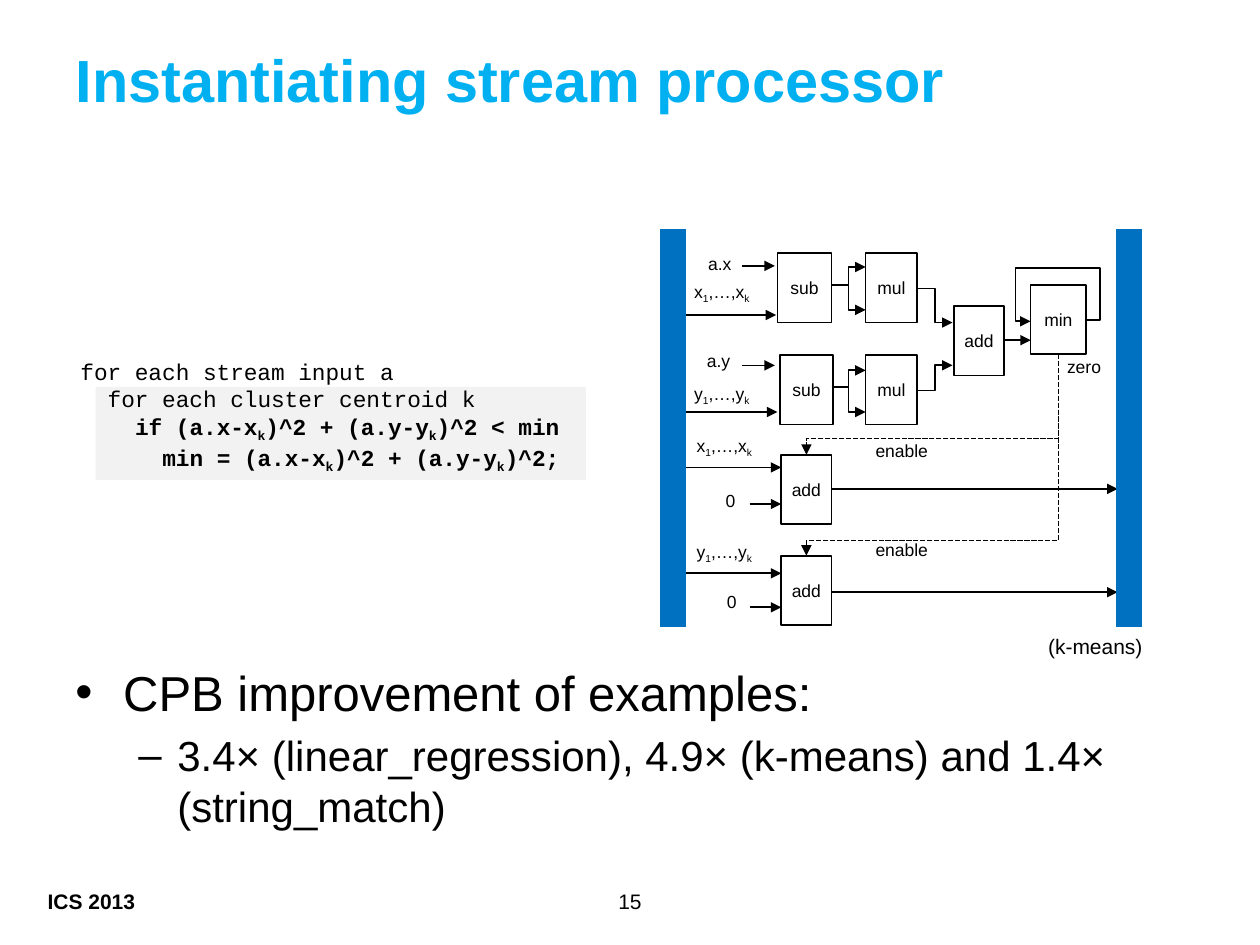
from lxml.etree import SubElement as Sub
from pptx import Presentation
from pptx.dml.color import RGBColor as RGB
from pptx.enum.dml import MSO_LINE
from pptx.enum.shapes import MSO_CONNECTOR as Link, MSO_SHAPE as Shape
from pptx.enum.text import MSO_ANCHOR as Anchor, PP_ALIGN as Align
from pptx.oxml.ns import qn
from pptx.util import Pt

PX = 9144  # 100 px to the inch
COLORS = dict(ink="000000", title="00B0F0", bar="0070C0", shade="F2F2F2")
SANS, MONO = "Arial", "Courier New"

# Content; "~" lowers the next letter
TITLE = "Instantiating stream processor"
CODE = [  # text, indent in letters, bold
    ("for each stream input a", 0, False),
    ("for each cluster centroid k", 2, False),
    ("if (a.x-x~k)^2 + (a.y-y~k)^2 < min", 4, True),
    ("min = (a.x-x~k)^2 + (a.y-y~k)^2;", 6, True),
]
POINTS = [  # text, size, left margin, hanging indent, bullet
    ("CPB improvement of examples:", 28, 38, 38, "•"),
    ("3.4× (linear_regression), 4.9× (k-means) and 1.4× (string_match)",
     24, 81, 31, "–"),
]
NODES = [  # text, x, y, width
    ("sub", 617, 201, 43), ("mul", 687, 201, 41),
    ("sub", 619, 282, 42), ("mul", 687, 282, 41),
    ("add", 757, 243, 40), ("min", 818, 226, 44),
    ("add", 620, 361, 40), ("add", 620, 441, 40),
]
NODE_H = 55
TIGHT = [  # labels without margins: text, x, y, width
    ("a.x", 562, 201, 28), ("a.y", 561, 278, 28),
    ("x~1,…,x~k", 551, 223, 57), ("y~1,…,y~k", 551, 304, 57),
    ("x~1,…,x~k", 553, 345, 57), ("y~1,…,y~k", 553, 429, 57),
]
LOOSE = [  # labels with margins
    ("0", 566, 384, 32), ("0", 567, 464, 32), ("zero", 837, 278, 55),
    ("enable", 685, 344, 71), ("enable", 685, 423, 71),
]
FLAT = [  # level arrows: y, x from, x to
    (211, 589, 615), (250, 537, 616), (290, 589, 615), (327, 537, 617),
    (371, 537, 620), (400, 595, 620), (455, 537, 620), (482, 595, 620),
    (270, 797, 818), (388, 660, 887), (470, 660, 887),
]
BENT = [  # elbow arrows: from, to
    (660, 226, 687, 212), (660, 226, 687, 246),
    (660, 307, 687, 294), (660, 307, 687, 327),
    (728, 229, 756, 256), (728, 310, 756, 290),
]
ENABLE = [(361, 348), (441, 429)]  # arrow end y, turn y
MIN_OUT = (840, 281)
ADD_TOP = 640
LOOP = (862, 254, 818, 255)
LOOP_VIA = (873, 212, 806)
BARS, BAR_Y = (534, 896), (182, 498)

prs = Presentation()
prs.slide_width, prs.slide_height = 1000 * PX, 750 * PX
slide = prs.slides.add_slide(prs.slide_layouts[5])
shapes = slide.shapes


def put(obj, **vals):
    for key, val in vals.items():
        setattr(obj, key, val)


def place(obj, x, y, w, h):
    put(obj, left=x * PX, top=y * PX, width=w * PX, height=h * PX)


def color(name):
    return RGB.from_string(COLORS[name])


def write(para, text, size, hue="ink", face=SANS, bold=False):
    def add(part, low=False):
        if part:
            run = para.add_run()
            run.text = part
            put(run.font, size=Pt(size), name=face, bold=bold)
            run.font.color.rgb = color(hue)
            if low:
                run.font._element.set("baseline", "-25000")

    head, *rest = text.split("~")
    add(head)
    for part in rest:
        add(part[0], True)
        add(part[1:])


def frame(x, y, w, h, wrap=True):
    box = shapes.add_textbox(x * PX, y * PX, w * PX, h * PX).text_frame
    box.word_wrap = wrap
    return box


def label(text, x, y, w, h, size=10, wrap=True, tight=False, **fmt):
    box = frame(x, y, w, h, wrap)
    if tight:
        put(box, margin_left=0, margin_right=0, margin_top=0, margin_bottom=0)
    write(box.paragraphs[0], text, size, **fmt)
    return box.paragraphs[0]


def block(x, y, w, h):
    box = shapes.add_shape(Shape.RECTANGLE, x * PX, y * PX, w * PX, h * PX)
    box.shadow.inherit = False
    return box


def line(x1, y1, x2, y2, kind=Link.STRAIGHT, hue="ink", wide=1, arrow=True):
    wire = shapes.add_connector(kind, x1 * PX, y1 * PX, x2 * PX, y2 * PX)
    wire.line.color.rgb = color(hue)
    wire.line.width = Pt(wide)
    if arrow:
        Sub(wire.line._get_or_add_ln(), qn("a:tailEnd"), type="triangle")
    Sub(wire._element.spPr, qn("a:effectLst"))
    return wire


def bend(wire, *parts):
    """Set where an elbow turns, as shares of its span."""
    geom = wire._element.spPr.find(qn("a:prstGeom"))
    geom.set("prst", "bentConnector5" if len(parts) == 3 else "bentConnector3")
    guides = geom.find(qn("a:avLst"))
    for num, part in enumerate(parts, 1):
        Sub(guides, qn("a:gd"), name=f"adj{num}",
            fmla=f"val {round(part * 100000)}")


# Footer
label("15", 471, 700, 58, 30, 12).alignment = Align.CENTER
label("ICS 2013", 28, 700, 90, 30, 12, wrap=False, bold=True)

# Title
title = shapes.title
place(title, 50, 0, 900, 125)
title.text_frame.vertical_anchor = Anchor.MIDDLE
para = title.text_frame.paragraphs[0]
para.alignment = Align.LEFT
write(para, TITLE, 34, "title", bold=True)

# Bullet points
body = frame(50, 521, 900, 149)
for num, (text, size, left, hang, mark) in enumerate(POINTS):
    para = body.add_paragraph() if num else body.paragraphs[0]
    para.space_before = Pt(size * 0.2)
    props = para._p.get_or_add_pPr()
    props.set("marL", str(left * PX))
    props.set("indent", str(-hang * PX))
    Sub(props, qn("a:buFont"), typeface=SANS)
    Sub(props, qn("a:buChar"), char=mark)
    write(para, text, size)

# Code on its shaded block
shade = block(76, 307, 389, 74)
shade.fill.solid()
shade.fill.fore_color.rgb = color("shade")
shade.line.fill.background()
code = frame(54, 279, 429, 98)
for num, (text, depth, bold) in enumerate(CODE):
    para = code.add_paragraph() if num else code.paragraphs[0]
    para._p.get_or_add_pPr().set("marL", str(Pt(depth * 7.8)))
    write(para, text, 13, face=MONO, bold=bold)

# Operators
for text, x, y, w in NODES:
    node = block(x, y, w, NODE_H)
    node.fill.background()
    node.line.color.rgb = color("ink")
    node.line.width = Pt(1)
    put(node.text_frame, margin_left=0, margin_right=0,
        vertical_anchor=Anchor.MIDDLE, word_wrap=True)
    para = node.text_frame.paragraphs[0]
    para.alignment = Align.CENTER
    write(para, text, 10)

# Data arrows
for y, x1, x2 in FLAT:
    line(x1, y, x2, y)
for ends in BENT:
    line(*ends, Link.ELBOW)

# Loop back into min
x1, y1, x2, y2 = LOOP
out, top, back = LOOP_VIA
bend(line(*LOOP, Link.ELBOW),
     (out - x1) / (x2 - x1), (top - y1) / (y2 - y1), (back - x1) / (x2 - x1))

# Dashed enable arrows: elbows turned a quarter so they leave downwards
x, y = MIN_OUT
for end, turn in ENABLE:
    w, h = end - y, x - ADD_TOP
    left, top = (x + ADD_TOP - w) // 2, (y + end - h) // 2
    wire = line(left, top, left + w, top + h, Link.ELBOW)
    wire.line.dash_style = MSO_LINE.SQUARE_DOT
    wire._element.spPr.find(qn("a:xfrm")).set("rot", "5400000")
    bend(wire, (turn - y) / w)

# Labels and side bars
for text, x, y, w in TIGHT:
    label(text, x, y, w, 17, tight=True)
for text, x, y, w in LOOSE:
    label(text, x, y, w, 27)
for x in BARS:
    line(x, BAR_Y[0], x, BAR_Y[1], hue="bar", wide=15, arrow=False)
label("(k-means)", 822, 498, 96, 30, 12, wrap=False)

prs.save("out.pptx")
